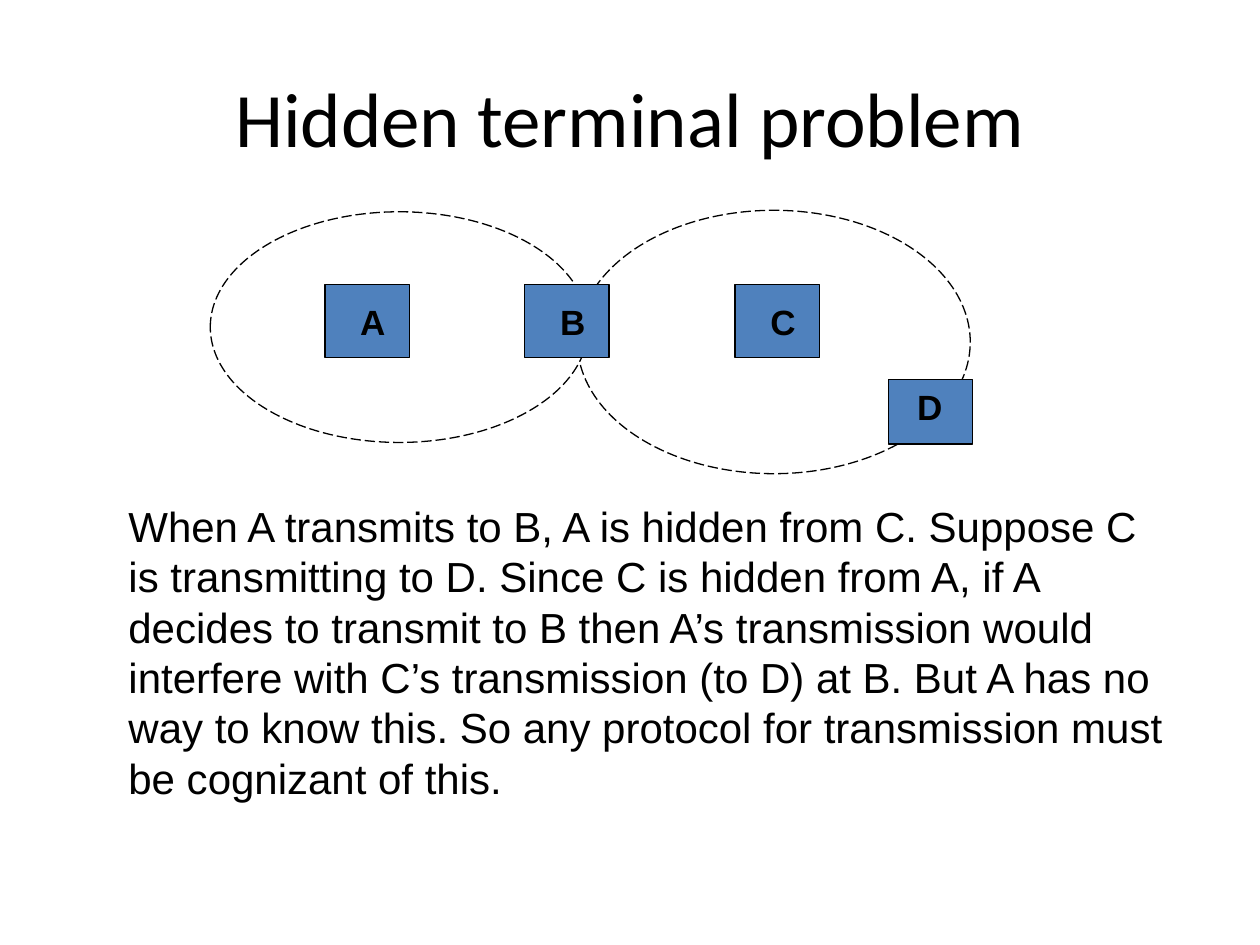
from pptx import Presentation
from pptx.dml.color import RGBColor
from pptx.enum.dml import MSO_LINE
from pptx.enum.shapes import MSO_SHAPE
from pptx.enum.text import MSO_ANCHOR, MSO_AUTO_SIZE, PP_ALIGN
from pptx.util import Cm, Pt

BLACK = RGBColor(0, 0, 0)
WHITE = RGBColor(255, 255, 255)
BLUE = RGBColor(0x4F, 0x81, 0xBD)

deck = Presentation()
deck.slide_width, deck.slide_height = Cm(25.4), Cm(19.05)
slide = deck.slides.add_slide(deck.slide_layouts[5])


def outline(kind, box, fill):
    shape = slide.shapes.add_shape(kind, *map(Cm, box))
    shape.shadow.inherit = False
    shape.fill.solid()
    shape.fill.fore_color.rgb = fill
    shape.line.color.rgb = BLACK
    shape.line.width = Pt(0.75)
    return shape


def write(box, text, size, align, bold=False):
    frame = slide.shapes.add_textbox(*map(Cm, box)).text_frame
    frame.word_wrap = True
    frame.auto_size = MSO_AUTO_SIZE.SHAPE_TO_FIT_TEXT
    para = frame.paragraphs[0]
    para.text = text
    para.alignment = align
    para.font.name = "Arial"
    para.font.size = Pt(size)
    para.font.bold = bold
    para.font.color.rgb = BLACK


title = slide.shapes.title
title.left, title.top, title.width, title.height = Cm(1.27), Cm(0.76), Cm(22.86), Cm(3.18)
title.text_frame.vertical_anchor = MSO_ANCHOR.MIDDLE
head = title.text_frame.paragraphs[0]
head.text = "Hidden terminal problem"
head.alignment = PP_ALIGN.CENTER
head.font.name = "Calibri"
head.font.size = Pt(44)
head.font.color.rgb = BLACK

for box in [(11.64, 4.24, 7.92, 5.31), (4.24, 4.27, 7.62, 4.65)]:
    oval = outline(MSO_SHAPE.OVAL, box, WHITE)
    oval.line.dash_style = MSO_LINE.LONG_DASH

nodes = [
    ("A", 6.55, 5.74, 1.47, 0.43, 0.2),
    ("B", 10.58, 5.74, 1.47, 0.43, 0.2),
    ("C", 14.82, 5.74, 1.47, 0.43, 0.2),
    ("D", 17.91, 7.65, 1.3, 0.3, 0),
]
for name, left, top, height, dx, dy in nodes:
    outline(MSO_SHAPE.RECTANGLE, (left, top, 1.7, height), BLUE)
    write((left + dx, top + dy, 1.07, 1.12), name, 20, PP_ALIGN.CENTER, True)

write(
    (2.34, 9.96, 21.39, 6.4),
    "When A transmits to B, A is hidden from C. Suppose C is transmitting to D. "
    "Since C is hidden from A, if A decides to transmit to B then A’s transmission "
    "would interfere with C’s transmission (to D) at B. But A has no way to know "
    "this. So any protocol for transmission must be cognizant of this.",
    24,
    PP_ALIGN.LEFT,
)

deck.save("out.pptx")
